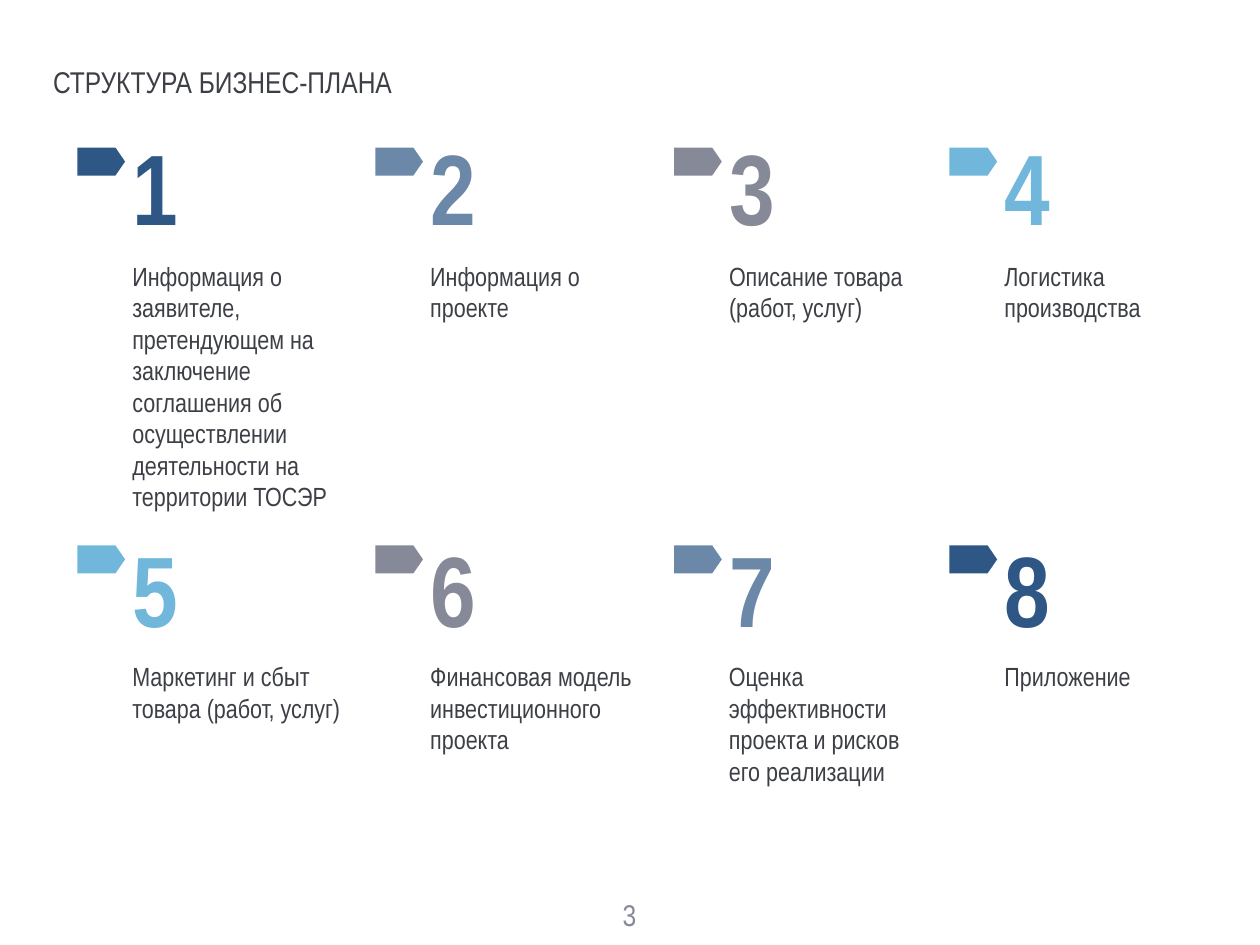
"""Build the slide listing the eight sections of a business plan."""
from pptx import Presentation
from pptx import util as u
from pptx.dml.color import RGBColor
from pptx.enum import shapes, text

INK = RGBColor(0x3D, 0x3F, 0x46)
NAVY = RGBColor(0x2E, 0x57, 0x85)
STEEL = RGBColor(0x6C, 0x88, 0xA9)
GREY = RGBColor(0x86, 0x8A, 0x98)
SKY = RGBColor(0x70, 0xB7, 0xDB)

HEADING = "СТРУКТУРА БИЗНЕС-ПЛАНА"
PAGE = "3"
SECTIONS = [
    ("Информация о заявителе, претендующем на заключение соглашения "
     "об осуществлении деятельности на территории ТОСЭР", NAVY, 2.45, 8),
    ("Информация о проекте", STEEL, 2.45, 2),
    ("Описание товара (работ, услуг)", GREY, 2.45, 2),
    ("Логистика производства", SKY, 2.37, 2),
    ("Маркетинг и сбыт товара (работ, услуг)", SKY, 2.37, 2),
    ("Финансовая модель инвестиционного проекта", GREY, 2.45, 3),
    ("Оценка эффективности проекта и рисков его реализации", STEEL, 2.2, 4),
    ("Приложение", NAVY, 2.45, 1),
]
COLUMNS = [1.47, 4.78, 8.1, 11.16]
ROWS = [
    {"marker": 1.53, "number": 1.38, "caption": 2.89},
    {"marker": 5.95, "number": 5.84, "caption": 7.34},
]
LINE = 0.353
LEFT, CENTER = text.PP_ALIGN.LEFT, text.PP_ALIGN.CENTER
TOP, MIDDLE, BOTTOM = (text.MSO_ANCHOR.TOP, text.MSO_ANCHOR.MIDDLE,
                       text.MSO_ANCHOR.BOTTOM)


def write(holder, words, size, color, align=LEFT, anchor=TOP,
          bold=False, wrap=True, left=0, right=0):
    frame = holder.text_frame
    frame.text = words
    layout = {"auto_size": text.MSO_AUTO_SIZE.NONE, "word_wrap": wrap,
              "vertical_anchor": anchor, "margin_left": u.Inches(left),
              "margin_right": u.Inches(right), "margin_top": 0,
              "margin_bottom": 0}
    for key, value in layout.items():
        setattr(frame, key, value)
    line = frame.paragraphs[0]
    line.alignment = align
    line.space_before = u.Pt(0)
    font = line.runs[0].font
    for key, value in {"name": "Arial Narrow", "size": u.Pt(size),
                       "bold": bold}.items():
        setattr(font, key, value)
    font.color.rgb = color


def add_section(slide, index, caption, color, width, lines):
    row, column = divmod(index, len(COLUMNS))
    left, tops = COLUMNS[column], ROWS[row]
    marker = slide.shapes.add_shape(
        shapes.MSO_SHAPE.FLOWCHART_OFFPAGE_CONNECTOR,
        *map(u.Inches, (left - 0.5, tops["marker"], 0.31, 0.53)))
    marker.rotation = 270
    marker.shadow.inherit = False
    marker.fill.solid()
    marker.fill.fore_color.rgb = color
    marker.line.fill.background()
    number = slide.shapes.add_textbox(
        *map(u.Inches, (left, tops["number"], 0.51, 1.35)))
    write(number, str(index + 1), 80, color, CENTER, BOTTOM,
          bold=True, wrap=False)
    body = slide.shapes.add_textbox(
        *map(u.Inches, (left, tops["caption"], width, lines * LINE)))
    write(body, caption, 21, INK)


def main():
    deck = Presentation()
    deck.slide_width, deck.slide_height = u.Inches(14), u.Inches(10.5)
    slide = deck.slides.add_slide(deck.slide_layouts[5])
    heading = slide.shapes.title
    for key, value in {"left": 0.39, "top": 0.7,
                       "width": 13.23, "height": 0.4}.items():
        setattr(heading, key, u.Inches(value))
    write(heading, HEADING, 24, INK, anchor=MIDDLE, left=0.2, right=0.14)
    for index, section in enumerate(SECTIONS):
        add_section(slide, index, *section)
    page = slide.shapes.add_textbox(*map(u.Inches, (6.72, 9.89, 0.55, 0.55)))
    write(page, PAGE, 24, GREY, CENTER, MIDDLE)
    deck.save("out.pptx")


if __name__ == "__main__":
    main()
